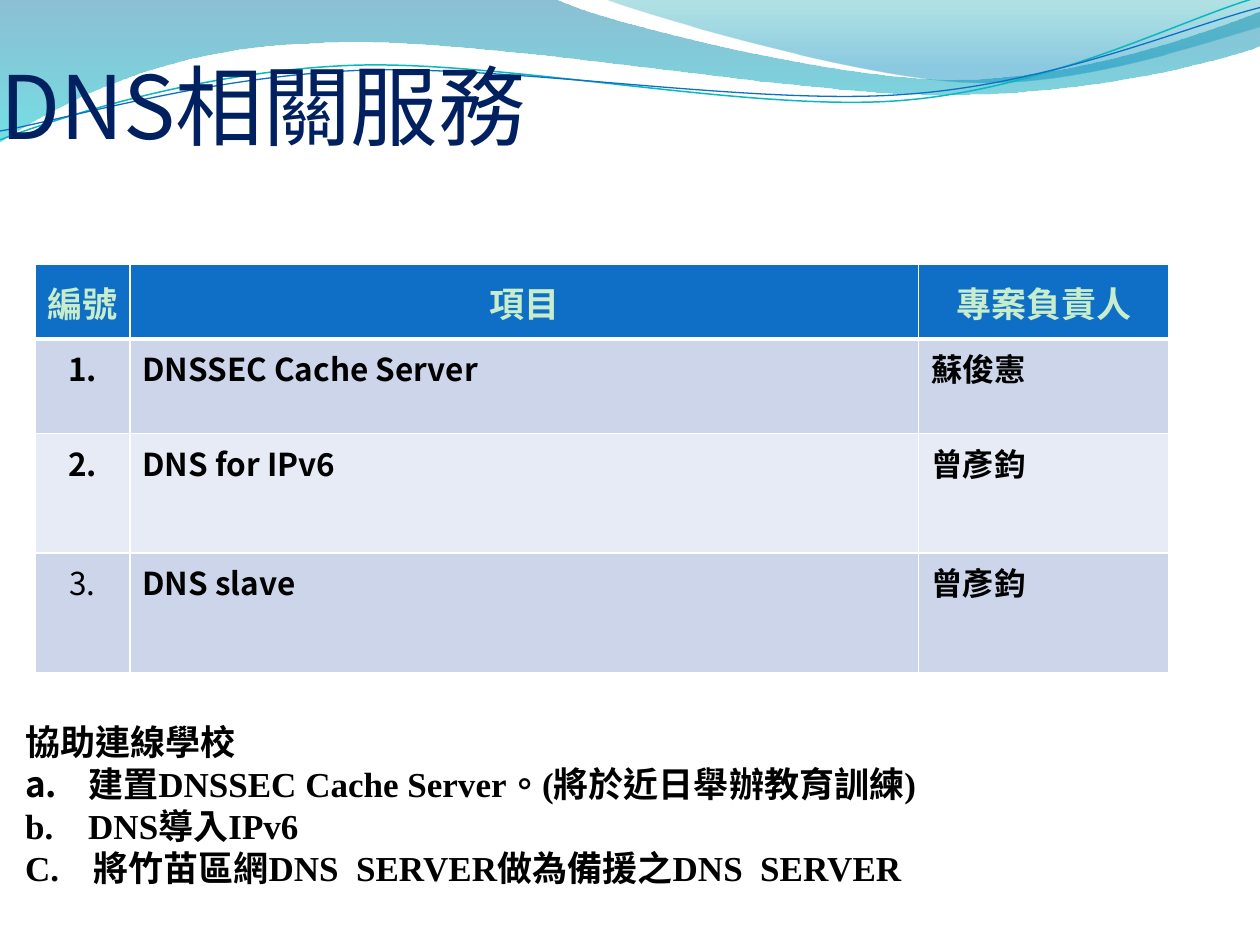
from typing import NamedTuple

from lxml import etree
from pptx import Presentation
from pptx.dml.color import RGBColor
from pptx.enum.text import MSO_ANCHOR, MSO_AUTO_SIZE, PP_ALIGN
from pptx.oxml.ns import qn
from pptx.util import Inches, Pt

LEFT, CENTER = PP_ALIGN.LEFT, PP_ALIGN.CENTER
TOP, MIDDLE, BOTTOM = MSO_ANCHOR.TOP, MSO_ANCHOR.MIDDLE, MSO_ANCHOR.BOTTOM
NO_AUTOFIT = MSO_AUTO_SIZE.NONE
SANS, SERIF = "Noto Sans CJK SC", "Times New Roman"
WHITE, BLACK, NAVY = "FFFFFF", "000000", "002060"
HEADER_FILL, HEADER_TEXT = "0F6FC6", "C7EDCC"
BAND_FILLS = ("CCD5EA", "E7EBF5")


class Stop(NamedTuple):
    position: float
    color: str
    opacity: int


class Wave(NamedTuple):
    segments: list
    stops: tuple = ()
    line: str = ""
    width: float = 0


WAVES = [
    Wave([(0, 0), (4.4, -0.01), (4.76, 0.17, 6.64, 0.63, 7.58, 0.63),
          (8.53, 0.63, 9.58, 0.26, 10, 0.09), (10.01, 0.36),
          (9.83, 0.44, 8.7, 0.76, 7.46, 0.75), (6.22, 0.75, 3.82, 0.28, 2.57, 0.34),
          (1.29, 0.36, 0.46, 0.83, -0.01, 1.13), (0, 0)],
         stops=(Stop(0, "0074A1", 45), Stop(1, "00C6CF", 55))),
    Wave([(4.79, -0.01), (5.09, 0.11, 6.82, 0.62, 7.69, 0.65),
          (8.56, 0.69, 9.61, 0.32, 10, 0.21), (10, 0), (4.79, -0.01)],
         stops=(Stop(0, "00A1A9", 30), Stop(0.8, "008BBF", 45))),
    Wave([(0, 1.11), (0.48, 0.93, 1.58, 0.57, 2.77, 0.52),
          (3.95, 0.47, 5.93, 0.89, 7.13, 0.8), (8.33, 0.71, 9.38, 0.15, 9.98, -0.02)],
         line="0AB8BF", width=0.85),
    Wave([(0, 1.04), (0.47, 0.96, 1.64, 0.61, 2.83, 0.56),
          (4.03, 0.51, 5.97, 0.84, 7.17, 0.75), (8.36, 0.67, 9.41, 0.21, 10, 0.06)],
         line="0F6FC6", width=0.75),
]

COLUMN_WIDTHS = (0.75, 6.26, 1.99)
ROW_HEIGHTS = (0.59, 0.75, 0.95, 0.95)
ROWS = [
    ("編號", "項目", "專案負責人"),
    ("1.", "DNSSEC Cache Server", "蘇俊憲"),
    ("2.", "DNS for IPv6", "曾彥鈞"),
    ("3.", "DNS slave", "曾彥鈞"),
]


class Note(NamedTuple):
    text: str
    numbered: bool = False
    indent: float = 0.5


NOTES = [
    Note("協助連線學校"),
    Note("建置DNSSEC Cache Server。(將於近日舉辦教育訓練)", True),
    Note("DNS導入IPv6", True),
    Note("C.\t將竹苗區網DNS  SERVER做為備援之DNS  SERVER", indent=0.54),
]


def rgb(color: str) -> RGBColor:
    return RGBColor.from_string(color)


def bend_segments(shape, segments: list) -> None:
    lines = list(shape._element.iter(qn("a:lnTo")))
    for line, segment in zip(lines, segments):
        if len(segment) == 2:
            continue
        curve = etree.Element(qn("a:cubicBezTo"))
        for x, y in zip(segment[::2], segment[1::2]):
            etree.SubElement(curve, qn("a:pt"), x=str(Inches(x) - shape.left),
                             y=str(Inches(y) - shape.top))
        line.getparent().replace(line, curve)


def draw_wave(page, wave: Wave) -> None:
    points = [(Inches(segment[-2]), Inches(segment[-1])) for segment in wave.segments]
    builder = page.shapes.build_freeform(*points[0])
    builder.add_line_segments(points[1:], close=bool(wave.stops))
    shape = builder.convert_to_shape()
    bend_segments(shape, wave.segments[1:])
    shape.shadow.inherit = False
    if not wave.stops:
        shape.fill.background()
        shape.line.color.rgb = rgb(wave.line)
        shape.line.width = Pt(wave.width)
        return
    shape.line.fill.background()
    shape.fill.gradient()
    shape.fill.gradient_angle = 270
    for target, stop in zip(shape.fill.gradient_stops, wave.stops):
        target.position = stop.position
        target.color.rgb = rgb(stop.color)
    for color, stop in zip(shape._element.spPr.iter(qn("a:srgbClr")), wave.stops):
        etree.SubElement(color, qn("a:alpha"), val=str(stop.opacity * 1000))


def format_para(para, size: float, font: str, color: str, bold: bool, align=LEFT) -> None:
    para.alignment = align
    para.font.size = Pt(size)
    para.font.name = font
    para.font.bold = bold
    para.font.color.rgb = rgb(color)
    for span in para.runs:
        properties = span._r.get_or_add_rPr()
        properties.set("lang", "zh-TW")
        etree.SubElement(properties, qn("a:latin"), typeface=font)
        etree.SubElement(properties, qn("a:ea"), typeface=SANS)


def format_frame(frame) -> None:
    frame.word_wrap = True
    frame.auto_size = NO_AUTOFIT
    frame.vertical_anchor = BOTTOM
    frame.margin_left = frame.margin_right = frame.margin_bottom = 0
    frame.margin_top = Inches(0.05)


def set_borders(cell, header: bool) -> None:
    properties = cell._tc.get_or_add_tcPr()
    for index, side in enumerate(("lnL", "lnR", "lnT", "lnB")):
        width = 3 if header and side == "lnB" else 1
        line = etree.Element(qn(f"a:{side}"), w=str(Pt(width)))
        fill = etree.SubElement(line, qn("a:solidFill"))
        etree.SubElement(fill, qn("a:srgbClr"), val=WHITE)
        properties.insert(index, line)


def draw_title(page) -> None:
    title = page.shapes.title
    title.left, title.top, title.width, title.height = 0, 0, Inches(9), Inches(1.25)
    title.text_frame.text = "DNS相關服務"
    format_frame(title.text_frame)
    format_para(title.text_frame.paragraphs[0], 50, SANS, NAVY, False)
    page.shapes._spTree.append(title._element)


def draw_services(page) -> None:
    table = page.shapes.add_table(len(ROWS), len(COLUMN_WIDTHS), Inches(0.28), Inches(2.1),
                                  Inches(sum(COLUMN_WIDTHS)), Inches(sum(ROW_HEIGHTS))).table
    for column, width in zip(table.columns, COLUMN_WIDTHS):
        column.width = Inches(width)
    for row_index, (texts, height) in enumerate(zip(ROWS, ROW_HEIGHTS)):
        table.rows[row_index].height = Inches(height)
        header = row_index == 0
        for column_index, text in enumerate(texts):
            cell = table.cell(row_index, column_index)
            cell.text = text
            cell.fill.solid()
            cell.fill.fore_color.rgb = rgb(
                HEADER_FILL if header else BAND_FILLS[(row_index - 1) % 2])
            cell.vertical_anchor = MIDDLE if header else TOP
            para = cell.text_frame.paragraphs[0]
            if header:
                cell.margin_left = cell.margin_right = 0
                cell.margin_top = cell.margin_bottom = 0
                format_para(para, 20, SERIF, HEADER_TEXT, True, CENTER)
            else:
                align = CENTER if column_index == 0 else LEFT
                format_para(para, 18, SANS, BLACK, text != "3.", align)
            set_borders(cell, header)


def draw_notes(page) -> None:
    box = page.shapes.add_textbox(Inches(0.2), Inches(5.8), Inches(9), Inches(1.25))
    frame = box.text_frame
    format_frame(frame)
    for index, note in enumerate(NOTES):
        para = frame.paragraphs[0] if index == 0 else frame.add_paragraph()
        para.text = note.text
        format_para(para, 20, SERIF, BLACK, True)
        properties = para._p.get_or_add_pPr()
        properties.set("marL", str(Inches(note.indent)))
        properties.set("indent", str(-Inches(note.indent)))
        if note.numbered:
            properties.insert(0, etree.Element(qn("a:buAutoNum"), type="alphaLcPeriod"))


def main() -> None:
    deck = Presentation()
    deck.slide_width, deck.slide_height = Inches(10), Inches(7.5)
    page = deck.slides.add_slide(deck.slide_layouts[5])
    page.background.fill.solid()
    page.background.fill.fore_color.rgb = rgb(WHITE)
    for wave in WAVES:
        draw_wave(page, wave)
    draw_title(page)
    draw_services(page)
    draw_notes(page)
    deck.save("out.pptx")


if __name__ == "__main__":
    main()
